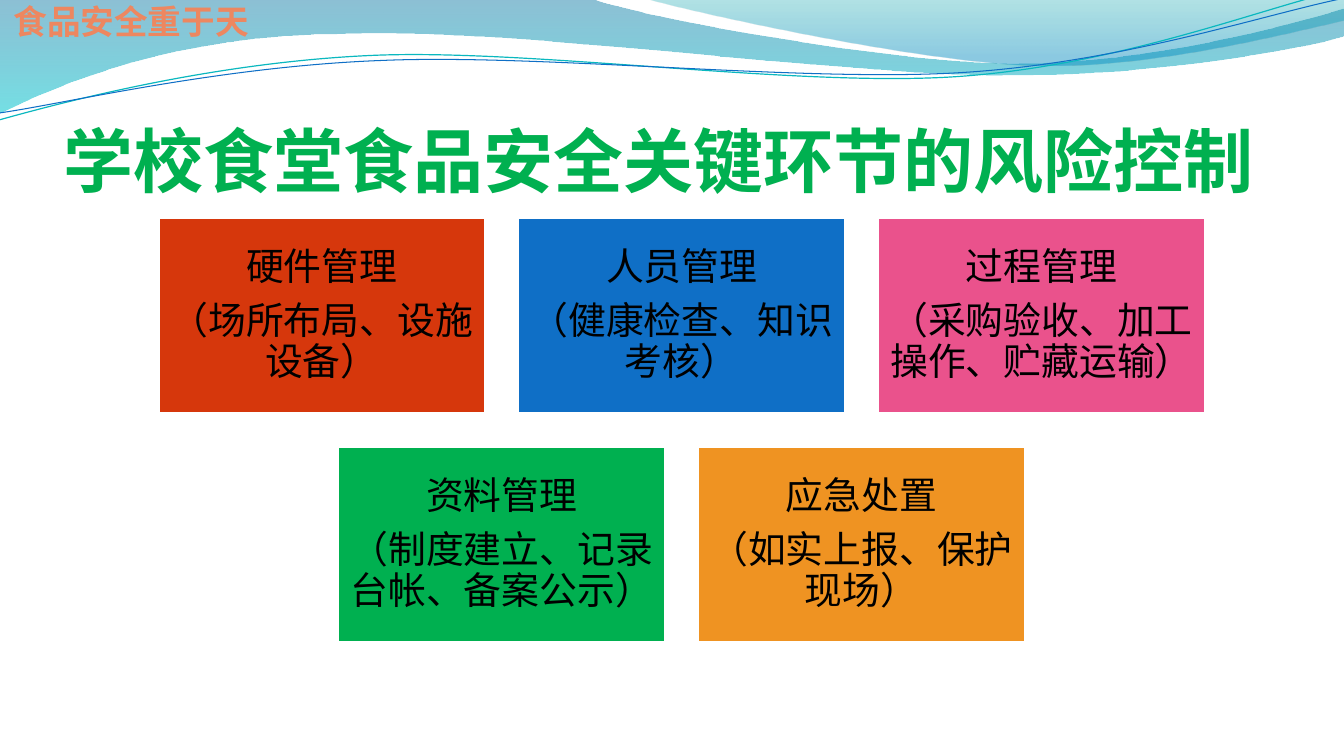
import pptx
import pptx.dml.color
import pptx.enum.shapes
import pptx.enum.text
import pptx.oxml.ns
import pptx.util
from dataclasses import dataclass

Pt = pptx.util.Pt
qn = pptx.oxml.ns.qn
Align = pptx.enum.text.PP_ALIGN
Anchor = pptx.enum.text.MSO_ANCHOR

TITLE = "学校食堂食品安全关键环节的风险控制"
MOTTO = "食品安全重于天"
CARD_ROWS = [
    [("硬件管理", "（场所布局、设施设备）", "D6370C"),
     ("人员管理", "（健康检查、知识考核）", "0F6FC6"),
     ("过程管理", "（采购验收、加工操作、贮藏运输）", "EA528C")],
    [("资料管理", "（制度建立、记录台帐、备案公示）", "00B050"),
     ("应急处置", "（如实上报、保护现场）", "EF9322")],
]

# Outlines in points: a start, then one point for a line or three for a curve.
# Gradient stops: position, colour, opacity in percent.
WAVES = [
    {"start": (0, -0.7),
     "steps": [[(422.6, -0.7)],
               [(456.5, 12.2), (637.2, 45.4), (727.9, 45.4)],
               [(819.4, 45.4), (920.2, 18.7), (959.8, 6.5)],
               [(961.2, 25.9)],
               [(943.9, 31.7), (835.2, 54.7), (715.7, 54)],
               [(596.9, 54), (366.5, 20.2), (247, 24.5)],
               [(123.8, 25.2), (43.9, 59.8), (-0.7, 81.4)]],
     "stops": [(0, "0074A1", 45), (1, "00C6CF", 55)]},
    {"start": (460.1, -0.7),
     "steps": [[(488.9, 7.9), (654.5, 44.6), (738, 46.8)],
               [(821.5, 49.7), (923, 23), (959.8, 15.1)],
               [(959.8, 0)]],
     "stops": [(0, "00A1A9", 30), (0.8, "008BBF", 45)]},
    {"start": (-0.7, 85.7),
     "steps": [[(46.1, 72.7), (151.9, 44.6), (265.7, 39.6)],
               [(379.4, 34.6), (568.8, 62.6), (684, 54.7)],
               [(799.2, 46.8), (901.4, 5.8), (958.3, -7.2)]],
     "stroke": ("0AB8BF", 0.85)},
    {"start": (0, 80.6),
     "steps": [[(45.4, 74.2), (157, 47.5), (272.2, 43.2)],
               [(386.6, 38.2), (573.1, 59), (687.6, 51.8)],
               [(802.8, 44.6), (903.6, 10.1), (960.5, -1.4)]],
     "stroke": ("0F6FC6", 0.75)},
]

SLIDE_WIDTH, SLIDE_HEIGHT = 960, 540
CARD_WIDTH = 233.7
CARD_HEIGHT = CARD_WIDTH * 0.6
CARD_GAP = CARD_WIDTH * 0.1
CARDS_TOP, CARDS_CENTRE = 155.4, 486.9


@dataclass(frozen=True)
class Theme:
    title_color: str = "00B050"
    motto_color: str = "ED8760"
    card_text: str = "000000"
    card_border: str = "FFFFFF"
    title_size: float = 50
    motto_size: float = 24
    card_size: float = 27
    title_font: str = "Calibri"
    card_font: str = "Cambria"
    chinese_font: str = "Noto Sans CJK SC"


THEME = Theme()


def rgb(color):
    return pptx.dml.color.RGBColor.from_string(color)


def write(frame, *paragraphs, size, font, color, bold=False, align=Align.CENTER,
          anchor=Anchor.TOP, insets=(7.2, 3.6, 7.2, 3.6), line_spacing=1, space_after=0):
    """Fill a text frame, one paragraph per string; insets run left, top, right, bottom."""
    frame.word_wrap = True
    frame.vertical_anchor = anchor
    (frame.margin_left, frame.margin_top,
     frame.margin_right, frame.margin_bottom) = map(Pt, insets)
    for index, text in enumerate(paragraphs):
        paragraph = frame.add_paragraph() if index else frame.paragraphs[0]
        paragraph.alignment = align
        paragraph.line_spacing = line_spacing
        paragraph.space_before = Pt(0)
        paragraph.space_after = Pt(space_after)
        run = paragraph.add_run()
        run.text = text
        run.font.size = Pt(size)
        run.font.bold = bold
        run.font.name = font
        run.font.color.rgb = rgb(color)
        properties = run.font._element
        properties.find(qn("a:latin")).addnext(
            properties.makeelement(qn("a:ea"), {"typeface": THEME.chinese_font}))


def bend(shape, steps):
    """Join the three straight segments of each three-point step into one cubic curve."""
    segments = iter(list(shape._element.iter(qn("a:lnTo"))))
    for step in steps:
        parts = [next(segments) for _ in step]
        if len(parts) == 3:
            curve = parts[0].makeelement(qn("a:cubicBezTo"), {})
            parts[0].addprevious(curve)
            for part in parts:
                curve.append(part[0])
                part.getparent().remove(part)


def add_wave(slide, start, steps, stops=None, stroke=None):
    builder = slide.shapes.build_freeform(Pt(start[0]), Pt(start[1]), scale=1.0)
    builder.add_line_segments([(Pt(x), Pt(y)) for step in steps for x, y in step],
                              close=stops is not None)
    wave = builder.convert_to_shape()
    bend(wave, steps)
    wave.shadow.inherit = False
    if stroke:
        color, width = stroke
        wave.fill.background()
        wave.line.color.rgb = rgb(color)
        wave.line.width = Pt(width)
        return
    wave.line.fill.background()
    wave.fill.gradient()
    wave.fill.gradient_angle = 270
    for stop, (position, color, _) in zip(wave.fill.gradient_stops, stops):
        stop.position = position
        stop.color.rgb = rgb(color)
    for node, (_, _, opacity) in zip(wave._element.spPr.iter(qn("a:srgbClr")), stops):
        node.append(node.makeelement(qn("a:alpha"), {"val": str(opacity * 1000)}))


def add_card(slide, left, top, heading, detail, color):
    card = slide.shapes.add_shape(pptx.enum.shapes.MSO_SHAPE.RECTANGLE, Pt(left), Pt(top),
                                  Pt(CARD_WIDTH), Pt(CARD_HEIGHT))
    card.shadow.inherit = False
    card.fill.solid()
    card.fill.fore_color.rgb = rgb(color)
    card.line.color.rgb = rgb(THEME.card_border)
    card.line.width = Pt(2)
    write(card.text_frame, heading, detail, size=THEME.card_size, font=THEME.card_font,
          color=THEME.card_text, anchor=Anchor.MIDDLE, insets=(8,) * 4,
          line_spacing=0.9, space_after=THEME.card_size * 0.35)


def main():
    deck = pptx.Presentation()
    deck.slide_width, deck.slide_height = Pt(SLIDE_WIDTH), Pt(SLIDE_HEIGHT)
    slide = deck.slides.add_slide(deck.slide_layouts[5])

    for wave in WAVES:
        add_wave(slide, **wave)

    title = slide.shapes.title
    title.left, title.top, title.width, title.height = map(Pt, (45, 54, 872, 90))
    title.text_frame.auto_size = pptx.enum.text.MSO_AUTO_SIZE.NONE
    write(title.text_frame, TITLE, size=THEME.title_size, font=THEME.title_font,
          color=THEME.title_color, bold=True, align=Align.LEFT, anchor=Anchor.BOTTOM,
          insets=(0, 3.6, 0, 0))

    for row, cards in enumerate(CARD_ROWS):
        row_width = len(cards) * (CARD_WIDTH + CARD_GAP) - CARD_GAP
        top = CARDS_TOP + row * (CARD_HEIGHT + CARD_GAP)
        for column, card in enumerate(cards):
            left = CARDS_CENTRE - row_width / 2 + column * (CARD_WIDTH + CARD_GAP)
            add_card(slide, left, top, *card)

    motto = slide.shapes.add_textbox(Pt(0.4), Pt(-2.9), Pt(186.5), Pt(36))
    motto.text_frame.auto_size = pptx.enum.text.MSO_AUTO_SIZE.SHAPE_TO_FIT_TEXT
    write(motto.text_frame, MOTTO, size=THEME.motto_size, font=THEME.chinese_font,
          color=THEME.motto_color, bold=True)

    deck.save("out.pptx")


if __name__ == "__main__":
    main()
